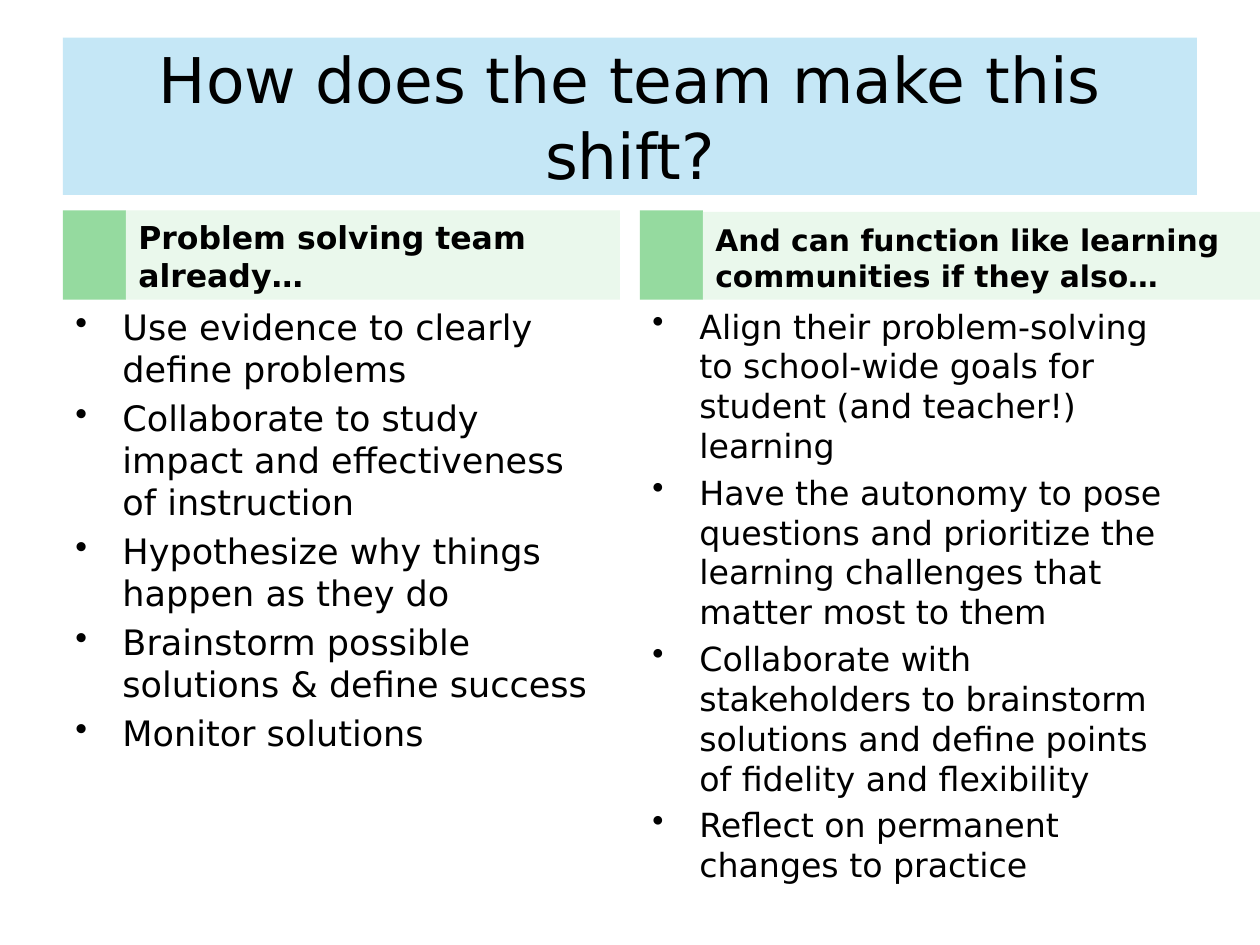
"""Build a slide comparing problem solving teams with learning communities."""
from lxml import etree
from pptx import Presentation
from pptx.dml.color import RGBColor
from pptx.enum.shapes import MSO_SHAPE
from pptx.enum.text import MSO_ANCHOR, PP_ALIGN
from pptx.oxml.ns import qn
from pptx.util import Cm, Pt

RECTANGLE = MSO_SHAPE.RECTANGLE
TOP, MIDDLE, BOTTOM = MSO_ANCHOR.TOP, MSO_ANCHOR.MIDDLE, MSO_ANCHOR.BOTTOM
LEFT, CENTER = PP_ALIGN.LEFT, PP_ALIGN.CENTER

FONT = "DejaVu Sans"
COLORS = {"title": "AADDF3", "tab": "95DA9F", "heading": "EAF8EC", "text": "000000"}
TITLE = "How does the team make this shift?"
COLUMNS = [
    {
        "heading": "Problem solving team already…",
        "heading_size": 18,
        "heading_width": 9.96,
        "heading_height": 1.8,
        "body_size": 20,
        "body_height": 10.97,
        "points": [
            "Use evidence to clearly define problems",
            "Collaborate to study impact and effectiveness of instruction",
            "Hypothesize why things happen as they do",
            "Brainstorm possible solutions & define success",
            "Monitor solutions",
        ],
    },
    {
        "heading": "And can function like learning communities if they also…",
        "heading_size": 17,
        "heading_width": 11.23,
        "heading_height": 1.77,
        "body_size": 19,
        "body_height": 12.17,
        "points": [
            "Align their problem-solving to school-wide goals for student "
            "(and teacher!) learning",
            "Have the autonomy to pose questions and prioritize the learning "
            "challenges that matter most to them",
            "Collaborate with stakeholders to brainstorm solutions and define "
            "points of fidelity and flexibility",
            "Reflect on permanent changes to practice",
        ],
    },
]

PAGE_WIDTH, PAGE_HEIGHT = 25.4, 19.05
MARGIN, COLUMN_WIDTH = 1.27, 11.23
COLUMN_STEP = PAGE_WIDTH - 2 * MARGIN - COLUMN_WIDTH
TITLE_TOP, TITLE_HEIGHT = 0.76, 3.17
TAB_WIDTH, TAB_HEIGHT = 1.27, 1.8
BODY_TOP = 6.04
BULLET_INDENT = 0.95


def add_panel(page, color, left, top, width, height):
    panel = page.shapes.add_shape(RECTANGLE, Cm(left), Cm(top), Cm(width), Cm(height))
    panel.shadow.inherit = False
    panel.fill.solid()
    panel.fill.fore_color.rgb = RGBColor.from_string(COLORS[color])
    panel.line.fill.background()
    return panel


def write(box, texts, size, anchor, align=LEFT, bold=False, bulleted=False):
    frame = box.text_frame
    frame.word_wrap = True
    frame.vertical_anchor = anchor
    for index, text in enumerate(texts):
        para = frame.add_paragraph() if index else frame.paragraphs[0]
        para.alignment = align
        if index:
            para.space_before = Pt(size * 0.2)
        if bulleted:
            props = para._p.get_or_add_pPr()
            props.set("marL", str(Cm(BULLET_INDENT)))
            props.set("indent", str(-Cm(BULLET_INDENT)))
            etree.SubElement(props, qn("a:buChar")).set("char", "•")
        span = para.add_run()
        span.text = text
        span.font.name = FONT
        span.font.size = Pt(size)
        span.font.bold = bold
        span.font.color.rgb = RGBColor.from_string(COLORS["text"])


def add_title(page):
    panel = add_panel(page, "title", MARGIN, TITLE_TOP, PAGE_WIDTH - 2 * MARGIN, TITLE_HEIGHT)
    color = panel._element.spPr.find(qn("a:solidFill"))[0]
    etree.SubElement(color, qn("a:alpha")).set("val", "68000")
    write(panel, [TITLE], 36, MIDDLE, CENTER)


def add_column(page, column, left):
    add_panel(page, "tab", left, BODY_TOP - TAB_HEIGHT, TAB_WIDTH, TAB_HEIGHT)
    height = column["heading_height"]
    heading = add_panel(page, "heading", left + TAB_WIDTH, BODY_TOP - height,
                        column["heading_width"], height)
    write(heading, [column["heading"]], column["heading_size"], BOTTOM, bold=True)
    body = page.shapes.add_textbox(Cm(left), Cm(BODY_TOP), Cm(COLUMN_WIDTH),
                                   Cm(column["body_height"]))
    write(body, column["points"], column["body_size"], TOP, bulleted=True)


def main():
    deck = Presentation()
    deck.slide_width, deck.slide_height = Cm(PAGE_WIDTH), Cm(PAGE_HEIGHT)
    page = deck.slides.add_slide(deck.slide_layouts[6])
    add_title(page)
    for index, column in enumerate(COLUMNS):
        add_column(page, column, MARGIN + index * COLUMN_STEP)
    deck.save("out.pptx")


if __name__ == "__main__":
    main()
